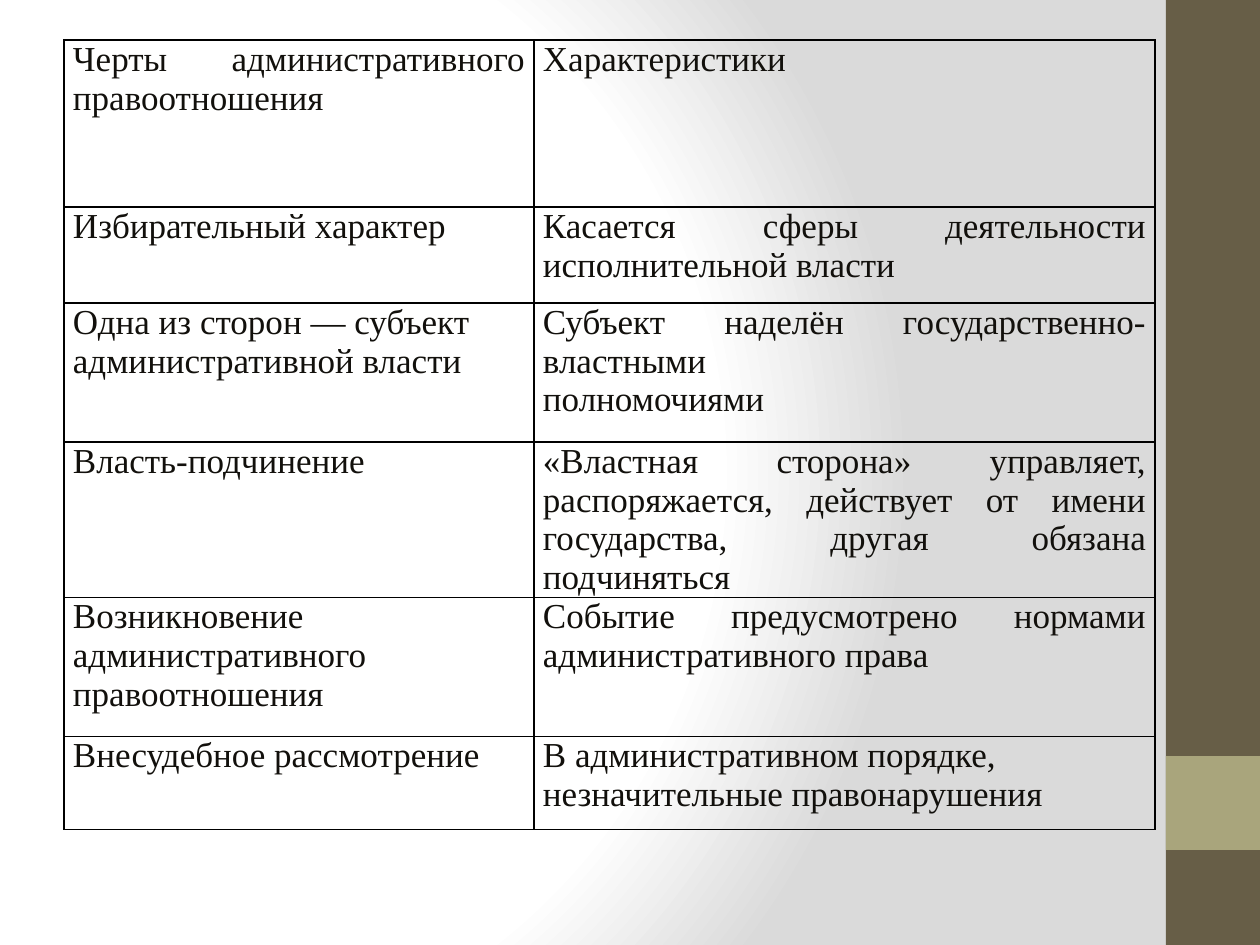
from typing import NamedTuple

from pptx import Presentation
from pptx.dml.color import RGBColor
from pptx.enum.shapes import MSO_SHAPE
from pptx.enum.text import PP_ALIGN
from pptx.oxml import parse_xml
from pptx.oxml.ns import nsdecls
from pptx.util import Pt

SCALE = 914400 / 126
BACK = [(0, "FFFFFF"), (75, "FFFFFF"), (100, "DADADA")]
INK = "12100C"
FONT = {"name": "Times New Roman", "size": Pt(20), "bold": False}
PLAIN = {"first_row": False, "horz_banding": False}
LEFT, JUST = PP_ALIGN.LEFT, PP_ALIGN.JUSTIFY


class Bar(NamedTuple):
    left: int
    top: int
    width: int
    height: int
    color: str


class Row(NamedTuple):
    height: int
    trait: str
    detail: str
    aligns: tuple = (JUST, JUST)


BARS = [Bar(1166, 0, 94, 945, "675E47"), Bar(1166, 756, 94, 94, "A9A57C")]
COLS = [470, 621]
ROWS = [
    Row(167, "Черты административного правоотношения", "Характеристики"),
    Row(96, "Избирательный характер",
        "Касается сферы деятельности исполнительной власти"),
    Row(139, "Одна из сторон — субъект административной власти",
        "Субъект наделён государственно-властными\nполномочиями", (LEFT, JUST)),
    Row(155, "Власть-подчинение",
        "«Властная сторона» управляет, распоряжается, действует от имени "
        "государства, другая обязана подчиняться"),
    Row(139, "Возникновение административного правоотношения",
        "Событие предусмотрено нормами административного права"),
    Row(93, "Внесудебное рассмотрение",
        "В административном порядке, незначительные правонарушения", (JUST, LEFT)),
]


def px(count: int) -> int:
    return round(count * SCALE)


def rgb(code: str) -> RGBColor:
    return RGBColor.from_string(code)


def put(item, values: dict) -> None:
    """Set each named attribute on item."""
    for name, value in values.items():
        setattr(item, name, value)


def paint_back(slide) -> None:
    stops = "".join(
        f'<a:gs pos="{pos * 1000}"><a:srgbClr val="{code}"/></a:gs>'
        for pos, code in BACK)
    slide.element.cSld.insert(0, parse_xml(
        f'<p:bg {nsdecls("p", "a")}><p:bgPr><a:gradFill rotWithShape="1">'
        f'<a:gsLst>{stops}</a:gsLst><a:path path="circle">'
        '<a:fillToRect l="20000" t="50000" r="100000" b="50000"/></a:path>'
        '</a:gradFill><a:effectLst/></p:bgPr></p:bg>'))


def draw_bar(slide, bar: Bar) -> None:
    shape = slide.shapes.add_shape(MSO_SHAPE.RECTANGLE, *map(px, bar[:4]))
    shape.shadow.inherit = False
    shape.fill.solid()
    shape.fill.fore_color.rgb = rgb(bar.color)
    shape.line.fill.background()


def add_edges(cell) -> None:
    """Give all four sides of the cell a thin black line."""
    props = cell._tc.get_or_add_tcPr()
    for spot, side in enumerate("LRTB"):
        props.insert(spot, parse_xml(
            f'<a:ln{side} {nsdecls("a")} w="{Pt(1)}"><a:solidFill>'
            f'<a:srgbClr val="000000"/></a:solidFill></a:ln{side}>'))


def fill_cell(cell, text: str, align: PP_ALIGN) -> None:
    put(cell, {"text": text, "margin_left": px(9), "margin_right": px(9),
               "margin_top": 0, "margin_bottom": 0})
    cell.fill.background()
    add_edges(cell)
    for para in cell.text_frame.paragraphs:
        para.alignment = align
        for run in para.runs:
            put(run.font, FONT)
            run.font.color.rgb = rgb(INK)


def draw_table(slide, left: int, top: int) -> None:
    high = sum(row.height for row in ROWS)
    table = slide.shapes.add_table(
        len(ROWS), len(COLS), px(left), px(top), px(sum(COLS)), px(high)).table
    put(table, PLAIN)
    for col, width in zip(table.columns, COLS):
        col.width = px(width)
    for line, row in zip(table.rows, ROWS):
        line.height = px(row.height)
        for cell, text, align in zip(line.cells, (row.trait, row.detail), row.aligns):
            fill_cell(cell, text, align)


def main() -> None:
    deck = Presentation()
    put(deck, {"slide_width": px(1260), "slide_height": px(945)})
    slide = deck.slides.add_slide(deck.slide_layouts[6])
    paint_back(slide)
    for bar in BARS:
        draw_bar(slide, bar)
    draw_table(slide, 64, 40)
    deck.save("out.pptx")


if __name__ == "__main__":
    main()
